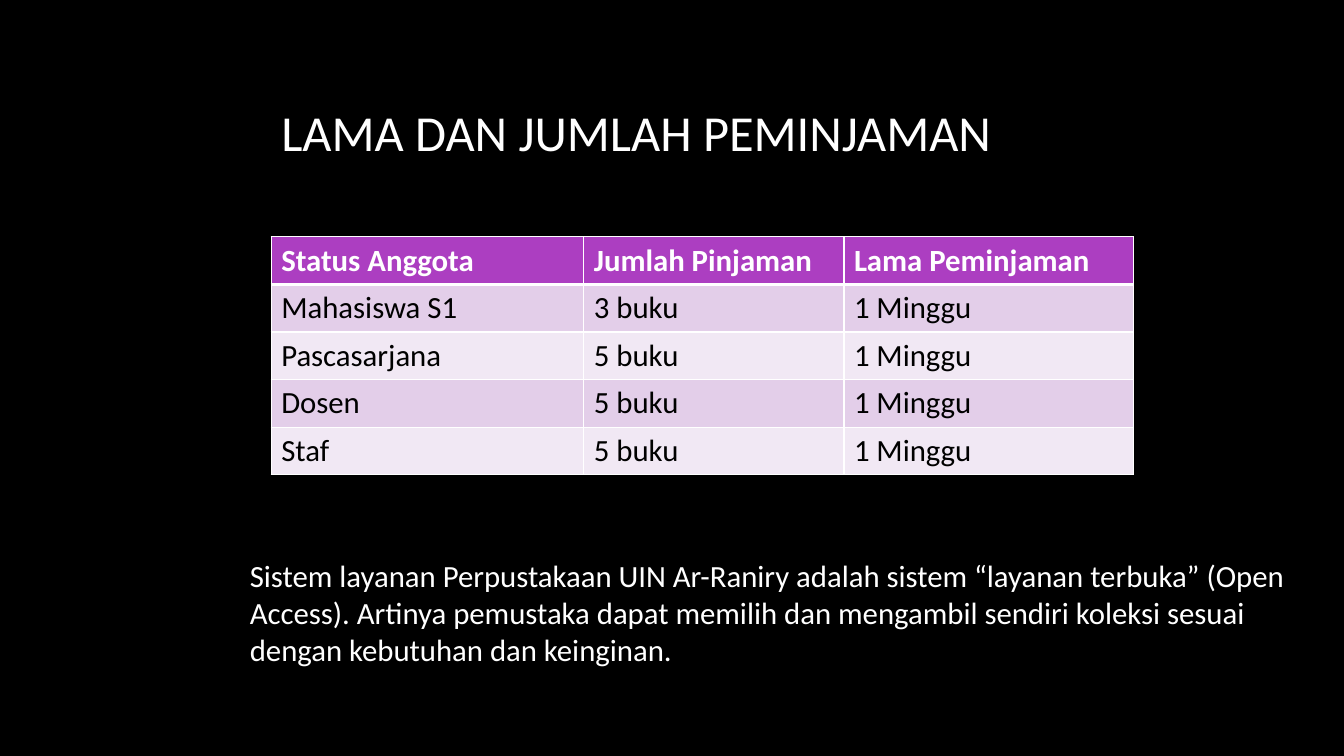
from lxml.etree import SubElement as Sub
from pptx import Presentation
from pptx.dml.color import RGBColor
from pptx.enum.text import MSO_ANCHOR as Anchor, MSO_AUTO_SIZE as Fit, PP_ALIGN as Align
from pptx.oxml.ns import qn
from pptx.util import Inches, Pt


def color(code):
    return RGBColor.from_string(code)


def write(frame, text, size, code, bold=False):
    para = frame.paragraphs[0]
    para.alignment = Align.LEFT
    run = para.add_run()
    run.text = text
    font = run.font
    font.name, font.size, font.bold = "Calibri", Pt(size), bold
    font.color.rgb = color(code)


deck = Presentation()
deck.slide_width, deck.slide_height = Inches(13.33), Inches(7.5)
slide = deck.slides.add_slide(deck.slide_layouts[5])
slide.background.fill.solid()
slide.background.fill.fore_color.rgb = color("000000")

# Title
title = slide.shapes.title
title.left, title.top = Inches(2.69), Inches(0.92)
title.width, title.height = Inches(9.75), Inches(0.76)
title.text_frame.vertical_anchor = Anchor.MIDDLE
write(title.text_frame, "LAMA DAN JUMLAH PEMINJAMAN", 36, "FFFFFF")

# Loan table
rows = [
    ("Status Anggota", "Jumlah Pinjaman", "Lama Peminjaman"),
    ("Mahasiswa S1", "3 buku", "1 Minggu"),
    ("Pascasarjana", "5 buku", "1 Minggu"),
    ("Dosen", "5 buku", "1 Minggu"),
    ("Staf", "5 buku", "1 Minggu"),
]
table = slide.shapes.add_table(
    len(rows), 3, Inches(2.69), Inches(2.35), Inches(8.55), Inches(2.35)
).table
for col, width in zip(table.columns, (3.1, 2.58, 2.87)):
    col.width = Inches(width)

for r, row in enumerate(rows):
    table.rows[r].height = Inches(0.47)
    head = r == 0
    shade = "AC3EC1" if head else ("F1E8F4", "E3CEE9")[r % 2]
    # The line under the header is thicker
    sides = {"L": 1, "R": 1, "T": 3 if r == 1 else 1, "B": 3 if head else 1}
    for c, text in enumerate(row):
        cell = table.cell(r, c)
        write(cell.text_frame, text, 22, "FFFFFF" if head else "000000", head)
        props = cell._tc.get_or_add_tcPr()
        for side, weight in sides.items():
            line = Sub(props, qn("a:ln" + side), w=str(Pt(weight)))
            Sub(Sub(line, qn("a:solidFill")), qn("a:srgbClr"), val="FFFFFF")
        cell.fill.solid()
        cell.fill.fore_color.rgb = color(shade)

# Note on the service
note = slide.shapes.add_textbox(
    Inches(2.38), Inches(5.47), Inches(10.46), Inches(1.21)
).text_frame
note.word_wrap = True
note.auto_size = Fit.SHAPE_TO_FIT_TEXT
write(
    note,
    "Sistem layanan Perpustakaan UIN Ar-Raniry adalah sistem “layanan terbuka” "
    "(Open Access). Artinya pemustaka dapat memilih dan mengambil sendiri koleksi "
    "sesuai dengan kebutuhan dan keinginan.",
    22,
    "FFFFFF",
)

deck.save("out.pptx")
